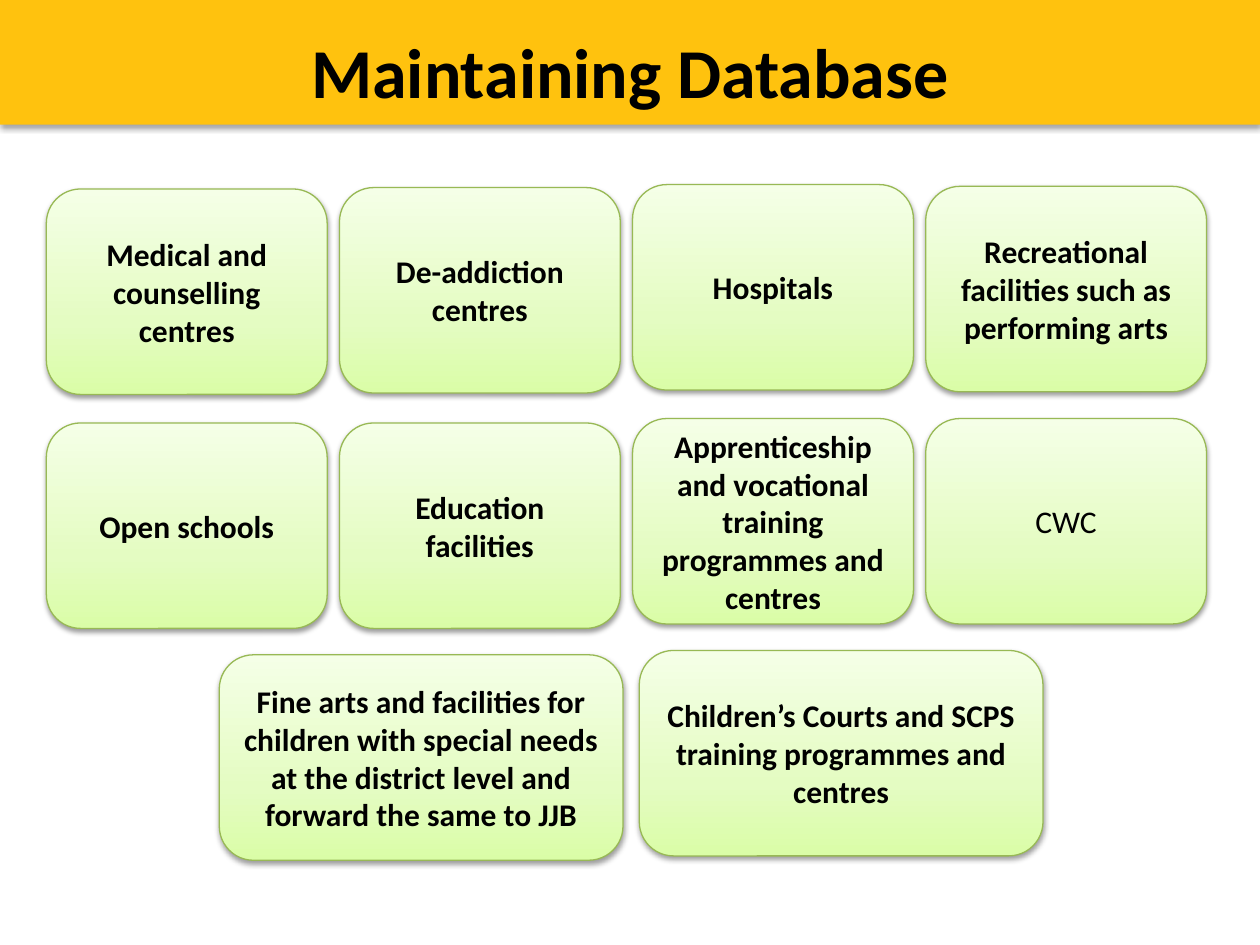
import copy
import lxml.etree
import pptx
import pptx.dml.color
import pptx.enum.shapes
import pptx.enum.text
import pptx.oxml.ns
import pptx.util

Pt = pptx.util.Pt
RGB = pptx.dml.color.RGBColor
Shape = pptx.enum.shapes.MSO_SHAPE
qn = pptx.oxml.ns.qn

GOLD = RGB(0xFF, 0xC2, 0x0E)
EDGE = RGB(0x98, 0xB9, 0x55)
BLACK = RGB(0, 0, 0)
STOPS = [
    (0, RGB(0xDA, 0xFD, 0xA7)),
    (0.35, RGB(0xE4, 0xFC, 0xC2)),
    (1, RGB(0xF5, 0xFF, 0xE7)),
]


def shade(shape, alpha, dist):
    """Give the shape a soft shadow straight below it."""
    shape.shadow.inherit = False
    effects = shape._element.spPr.find(qn("a:effectLst"))
    outer = lxml.etree.SubElement(
        effects, qn("a:outerShdw"), blurRad=str(Pt(3.1)), dist=str(Pt(dist)),
        dir="5400000", rotWithShape="0")
    color = lxml.etree.SubElement(outer, qn("a:srgbClr"), val="000000")
    lxml.etree.SubElement(color, qn("a:alpha"), val=str(alpha * 1000))


def write(shape, text, size, bold):
    """Put one centred black paragraph in the shape."""
    frame = shape.text_frame
    frame.word_wrap = True
    para = frame.paragraphs[0]
    para.text = text
    para.alignment = pptx.enum.text.PP_ALIGN.CENTER
    para.font.name = "Calibri"
    para.font.size = Pt(size)
    para.font.bold = bold
    para.font.color.rgb = BLACK


deck = pptx.Presentation()
deck.slide_width = Pt(720)
deck.slide_height = Pt(540)
slide = deck.slides.add_slide(deck.slide_layouts[6])
shapes = slide.shapes

# Title band
band = shapes.add_shape(Shape.RECTANGLE, 0, 0, Pt(720), Pt(71.3))
band.fill.solid()
band.fill.fore_color.rgb = GOLD
band.line.fill.background()
shade(band, 35, 1.8)

title = shapes.add_textbox(0, Pt(10.8), Pt(720), Pt(48.2))
write(title, "Maintaining Database", 40, True)
title.text_frame.margin_top = Pt(5.4)

# Rows of cards: left edge, step, card width, then (top, text) per card
rows = [
    (26.5, 167.5, 160.5, [
        (108, "Medical and counselling centres"),
        (107.2, "De-addiction centres"),
        (105.5, "Hospitals"),
        (106.5, "Recreational facilities such as performing arts"),
    ]),
    (26.5, 167.5, 160.5, [
        (241.7, "Open schools"),
        (241.7, "Education facilities"),
        (239.2, "Apprenticeship and vocational training programmes and centres"),
        (239.2, "CWC"),
    ]),
    (125.3, 240, 230.7, [
        (374.2, "Fine arts and facilities for children with special needs "
                "at the district level and forward the same to JJB"),
        (371.7, "Children’s Courts and SCPS training programmes and centres"),
    ]),
]

for left, step, width, cards in rows:
    for col, (top, text) in enumerate(cards):
        card = shapes.add_shape(
            Shape.ROUNDED_RECTANGLE,
            Pt(left + col * step), Pt(top), Pt(width), Pt(117.4))

        # Green gradient, darkest at the foot
        card.fill.gradient()
        card.fill.gradient_angle = 90
        stops = card._element.spPr.find(".//" + qn("a:gsLst"))
        stops.append(copy.deepcopy(stops[-1]))
        for stop, (place, color) in zip(card.fill.gradient_stops, STOPS):
            stop.position = place
            stop.color.rgb = color

        card.line.color.rgb = EDGE
        card.line.width = Pt(0.75)
        shade(card, 38, 1.6)
        write(card, text, 18, text != "CWC")
        card.text_frame.vertical_anchor = pptx.enum.text.MSO_ANCHOR.MIDDLE

deck.save("out.pptx")
